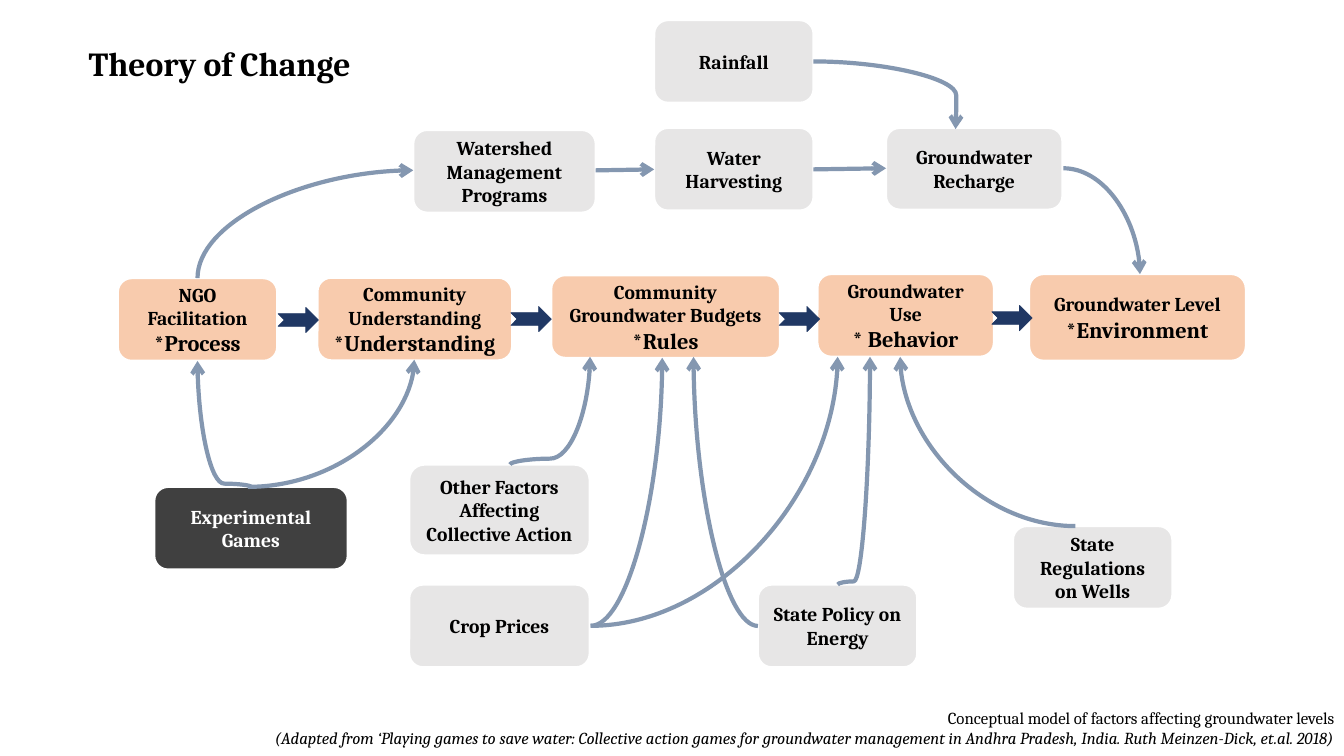
import math
from dataclasses import dataclass

import lxml.etree
import pptx
import pptx.dml.color
import pptx.enum.shapes
import pptx.enum.text
import pptx.oxml.ns
import pptx.util

Pt = pptx.util.Pt
qn = pptx.oxml.ns.qn
MSO_SHAPE = pptx.enum.shapes.MSO_SHAPE
MSO_CONNECTOR = pptx.enum.shapes.MSO_CONNECTOR
PP_ALIGN = pptx.enum.text.PP_ALIGN


def rgb(code):
    return pptx.dml.color.RGBColor.from_string(code)


@dataclass(frozen=True)
class Theme:
    font: str = "Cambria"
    text: str = "000000"
    light: str = "FFFFFF"
    stage: str = "F8CBAD"
    factor: str = "E7E6E6"
    games: str = "404040"
    link: str = "8497B0"
    step: str = "203864"
    title_size: float = 24
    outcome_size: float = 16
    label_size: float = 14
    note_size: float = 12


class Diagram:
    def __init__(self, slide, theme):
        self.slide = slide
        self.theme = theme

    def style(self, p, size, color, bold=False, italic=False, align=PP_ALIGN.LEFT):
        p.alignment = align
        for r in p.runs:
            r.font.name = self.theme.font
            r.font.size = Pt(size)
            r.font.bold = bold
            r.font.italic = italic
            r.font.color.rgb = rgb(color)

    def shape(self, kind, box, fill, line, weight):
        sp = self.slide.shapes.add_shape(kind, *map(Pt, box))
        sp.shadow.inherit = False
        sp.fill.solid()
        sp.fill.fore_color.rgb = rgb(fill)
        sp.line.color.rgb = rgb(line)
        sp.line.width = Pt(weight)
        return sp

    def node(self, text, box, fill, color):
        """Rounded box; a second line of text is the larger outcome."""
        sp = self.shape(MSO_SHAPE.ROUNDED_RECTANGLE, box, fill, self.theme.light, 1.5)
        tf = sp.text_frame
        tf.word_wrap = True
        tf.text = text
        sizes = (self.theme.label_size, self.theme.outcome_size)
        for p, size in zip(tf.paragraphs, sizes):
            self.style(p, size, color, bold=True, align=PP_ALIGN.CENTER)

    def step_arrow(self, x, y):
        self.shape(MSO_SHAPE.NOTCHED_RIGHT_ARROW, (x, y, 28.8, 18),
                   self.theme.step, self.theme.step, 0.5)

    def link(self, start, end, kind=MSO_CONNECTOR.STRAIGHT, turn=0):
        """Arrow from start to end, its frame turned clockwise by turn degrees."""
        (x1, y1), (x2, y2) = start, end
        cx, cy = (x1 + x2) / 2, (y1 + y2) / 2
        cos, sin = math.cos(math.radians(turn)), math.sin(math.radians(turn))
        half_w = ((x2 - x1) * cos + (y2 - y1) * sin) / 2
        half_h = ((y2 - y1) * cos - (x2 - x1) * sin) / 2
        c = self.slide.shapes.add_connector(
            kind, Pt(cx - half_w), Pt(cy - half_h), Pt(cx + half_w), Pt(cy + half_h))
        c.line.color.rgb = rgb(self.theme.link)
        c.line.width = Pt(3)
        pr = c._element.spPr
        if turn:
            pr.find(qn("a:xfrm")).set("rot", str(turn * 60000))
        lxml.etree.SubElement(pr.find(qn("a:ln")), qn("a:tailEnd"), type="arrow")
        lxml.etree.SubElement(pr, qn("a:effectLst"))
        return c

    def curve(self, start, end, turn=0, bend=None):
        """Curved arrow: one sweep, or an S whose middle lies at bend percent."""
        c = self.link(start, end, MSO_CONNECTOR.CURVE, turn)
        geom = c._element.spPr.find(qn("a:prstGeom"))
        if bend is None:
            geom.set("prst", "curvedConnector2")
        else:
            lxml.etree.SubElement(geom.find(qn("a:avLst")), qn("a:gd"),
                                  name="adj1", fmla=f"val {round(bend * 1000)}")

    def text_box(self, text, box):
        sp = self.slide.shapes.add_textbox(*map(Pt, box))
        tf = sp.text_frame
        tf.word_wrap = True
        tf.auto_size = pptx.enum.text.MSO_AUTO_SIZE.SHAPE_TO_FIT_TEXT
        tf.text = text
        return tf.paragraphs


STAGES = [
    ("NGO Facilitation\n*Process", (84.2, 198.7, 113.8, 59)),
    ("Community Understanding\n*Understanding", (226.8, 198.4, 139, 59)),
    ("Community Groundwater Budgets\n*Rules", (393.8, 196.6, 163.4, 59)),
    ("Groundwater Use\n* Behavior", (583.9, 195.8, 126, 59)),
    ("Groundwater Level\n*Environment", (735.1, 195.8, 154.8, 61.9)),
]
FACTORS = [
    ("Crop Prices", (292.3, 417.6, 128.9, 59)),
    ("State Policy on Energy", (541.4, 417.6, 113.8, 59)),
    ("State Regulations on Wells", (723.6, 375.8, 113.8, 59)),
    ("Other Factors Affecting Collective Action", (292.3, 331.9, 128.9, 64.8)),
    ("Watershed Management Programs", (295.2, 92.9, 130.3, 59)),
    ("Water Harvesting", (467.3, 91.4, 113.8, 59)),
    ("Groundwater Recharge", (632.9, 91.4, 126, 58.3)),
    ("Rainfall", (467.3, 14.4, 113.8, 59)),
]
STRAIGHT_LINKS = [
    ((425.5, 121.7), (467.3, 121)),
    ((581, 121), (632.9, 120.2)),
]
# start, end, turn, bend
CURVED_LINKS = [
    ((141.1, 198.7), (295.2, 121.7), 90, None),
    ((759.6, 120.2), (814.3, 195.8), 0, None),
    ((768.2, 375.8), (643, 254.9), 180, None),
    ((598.3, 417.6), (621.4, 254.9), 90, 1.4),
    ((421.9, 447.1), (598.3, 254.9), 0, None),
    ((364.3, 331.9), (421.5, 254.9), 90, 5.5),
    ((421.9, 447.1), (473, 255.6), 0, None),
    ((541.4, 447.1), (495.4, 254.9), 180, None),
    ((581, 43.9), (682.6, 92.2), 0, 100.5),
    ((177.1, 347.8), (295.9, 257), 0, None),
    ((179.3, 347.8), (141.1, 257.8), 270, 2.6),
]
STEP_ARROWS = [(198.7, 219.6), (365, 218.9), (556.6, 218.9), (708.5, 218.2)]
NOTE = (
    "Conceptual model of factors affecting groundwater levels\n"
    "(Adapted from ‘Playing games to save water: Collective action games for "
    "groundwater management in Andhra Pradesh, India. Ruth Meinzen-Dick, et.al. 2018)"
)


def main():
    prs = pptx.Presentation()
    prs.slide_width, prs.slide_height = Pt(960), Pt(540)
    theme = Theme()
    d = Diagram(prs.slides.add_slide(prs.slide_layouts[6]), theme)

    for text, box in STAGES:
        d.node(text, box, theme.stage, theme.text)
    for text, box in FACTORS:
        d.node(text, box, theme.factor, theme.text)
    d.node("Experimental Games", (110.2, 347.8, 138.2, 59), theme.games, theme.light)

    for start, end in STRAIGHT_LINKS:
        d.link(start, end)
    for start, end, turn, bend in CURVED_LINKS:
        d.curve(start, end, turn, bend)
    for x, y in STEP_ARROWS:
        d.step_arrow(x, y)

    title, = d.text_box("Theory of Change", (56.2, 27.4, 269.3, 36))
    d.style(title, theme.title_size, theme.text, bold=True)
    caption, credit = d.text_box(NOTE, (150.5, 501.8, 810, 36))
    d.style(caption, theme.note_size, theme.text, align=PP_ALIGN.RIGHT)
    d.style(credit, theme.note_size, theme.text, italic=True, align=PP_ALIGN.RIGHT)

    prs.save("out.pptx")


if __name__ == "__main__":
    main()
